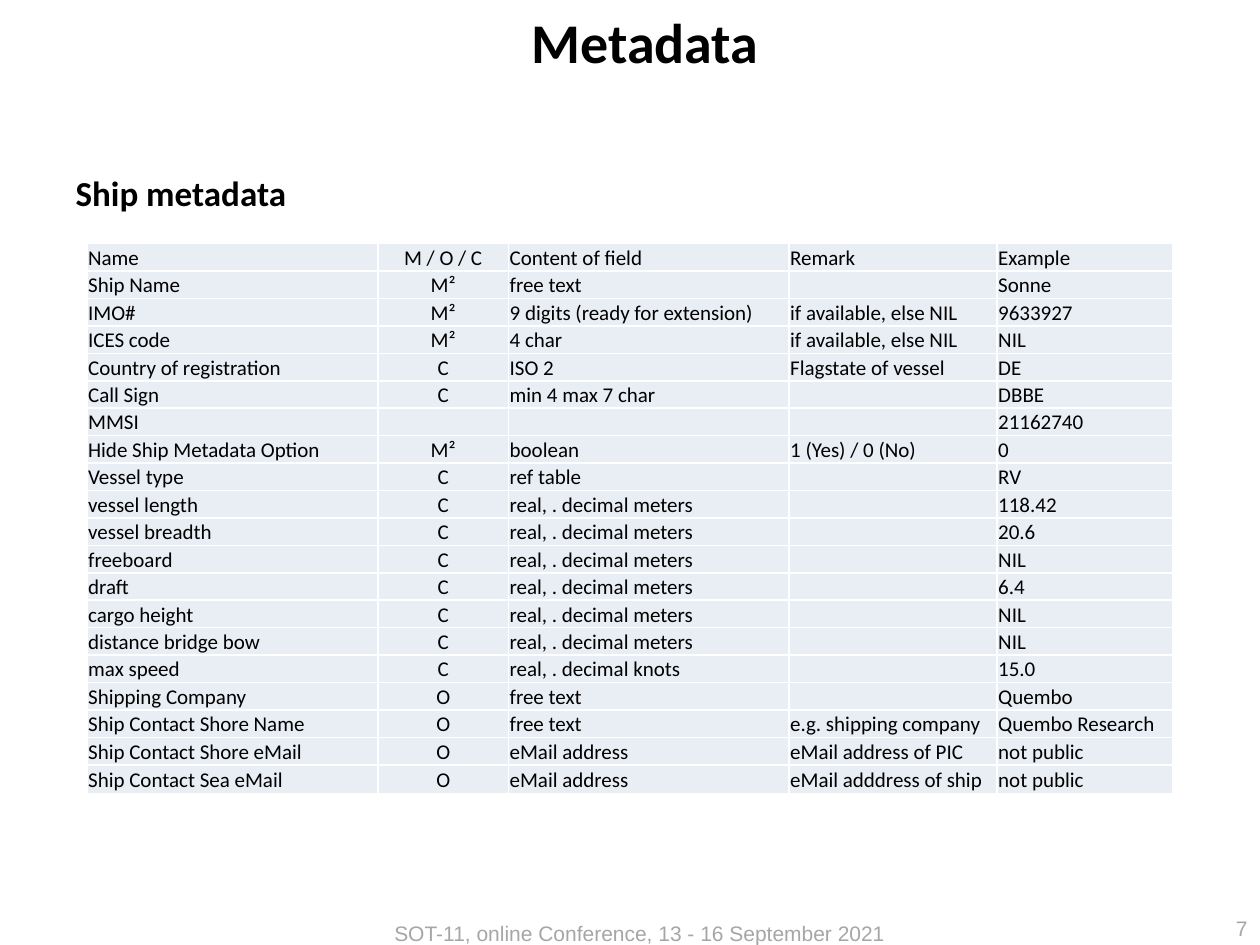
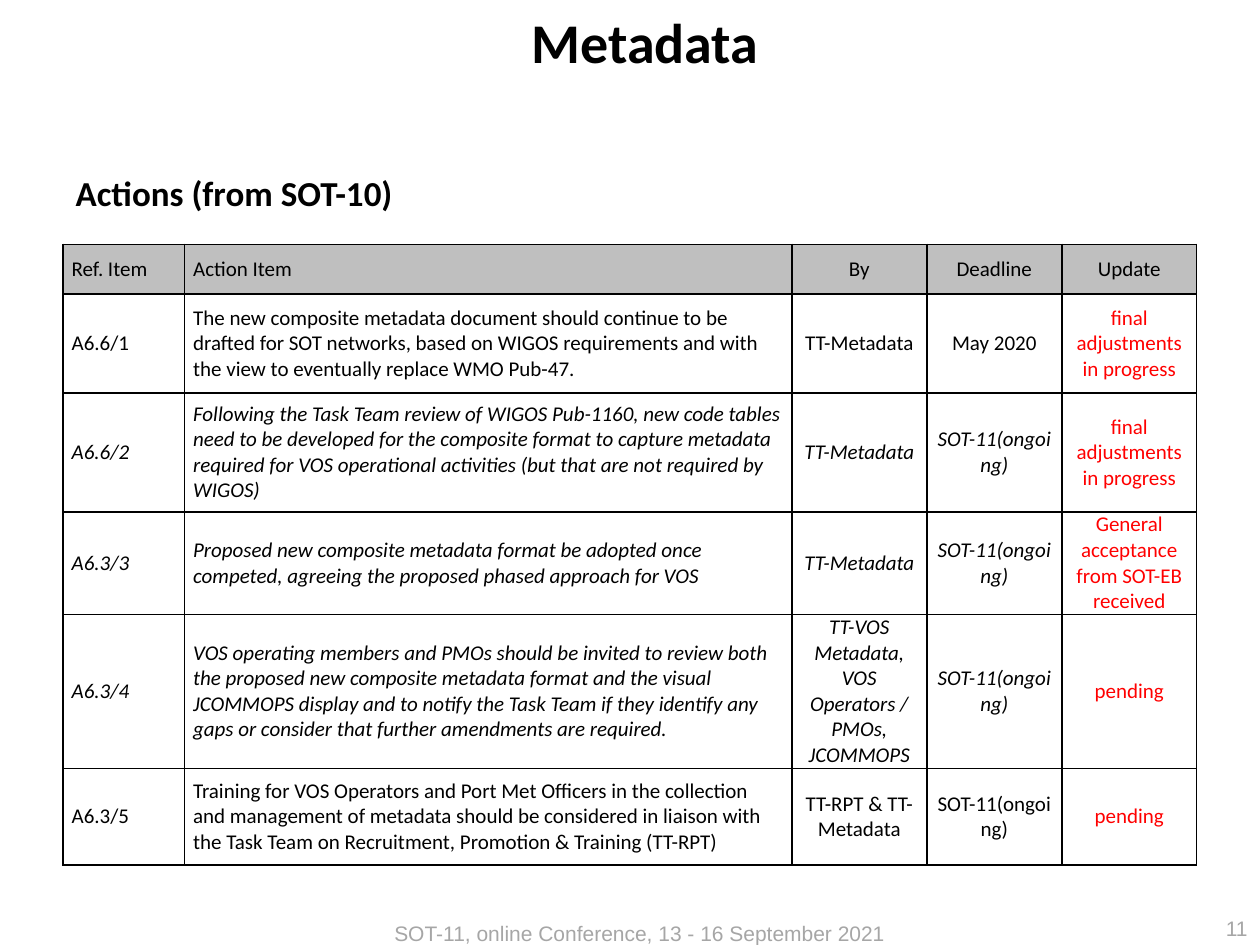
from dataclasses import dataclass

from lxml import etree
from pptx import Presentation
from pptx.dml.color import RGBColor
from pptx.enum.text import MSO_ANCHOR, PP_ALIGN
from pptx.oxml.ns import qn
from pptx.util import Pt

TOP, MIDDLE, BOTTOM = MSO_ANCHOR.TOP, MSO_ANCHOR.MIDDLE, MSO_ANCHOR.BOTTOM
LEFT, CENTER, RIGHT = PP_ALIGN.LEFT, PP_ALIGN.CENTER, PP_ALIGN.RIGHT

BLACK, WHITE, RED = "000000", "FFFFFF", "FF0000"
FOOTER_GRAY, HEADER_GRAY, PALE_BLUE = "A6A6A6", "BFBFBF", "E9EDF4"
TITLE_FONT, FOOTER_FONT = "Calibri", "Arial"
FOOTER_TEXT = "SOT-11, online Conference, 13 - 16 September 2021"


@dataclass(frozen=True)
class Box:
    left: float
    top: float
    width: float
    height: float


TITLE_BOX = Box(87.8, 0.7, 561.6, 70.6)
BODY_BOX = Box(36, 94.3, 648, 388.1)
FOOTER_BOX = Box(218.2, 522.7, 351.4, 21.6)
NUMBER_BOX = Box(558, 521.3, 162, 18)


@dataclass(frozen=True)
class TableSpec:
    left: float
    top: float
    columns: list[float]
    row_heights: list[float]
    rows: list[tuple[str, ...]]
    border: str
    anchor: MSO_ANCHOR
    insets: tuple[float, float, float, float]
    centered: set[int]
    header_fill: str | None = None
    body_fill: str | None = None
    italic_rows: frozenset[int] = frozenset()
    red_column: int | None = None


@dataclass(frozen=True)
class MetadataSlide:
    number: int
    heading: str
    table: TableSpec


METER = "real, . decimal meters"
AVAILABLE = "if available, else NIL"
SHIP_ROWS = [
    ("Name", "M / O / C", "Content of field", "Remark", "Example"),
    ("Ship Name", "M²", "free text", "", "Sonne"),
    ("IMO#", "M²", "9 digits (ready for extension)", AVAILABLE, "9633927"),
    ("ICES code", "M²", "4 char", AVAILABLE, "NIL"),
    ("Country of registration", "C", "ISO 2", "Flagstate of vessel", "DE"),
    ("Call Sign", "C", "min 4 max 7 char", "", "DBBE"),
    ("MMSI", "", "", "", "21162740"),
    ("Hide Ship Metadata Option", "M²", "boolean", "1 (Yes) / 0 (No)", "0"),
    ("Vessel type", "C", "ref table", "", "RV"),
    ("vessel length", "C", METER, "", "118.42"),
    ("vessel breadth", "C", METER, "", "20.6"),
    ("freeboard", "C", METER, "", "NIL"),
    ("draft", "C", METER, "", "6.4"),
    ("cargo height", "C", METER, "", "NIL"),
    ("distance bridge bow", "C", METER, "", "NIL"),
    ("max speed", "C", "real, . decimal knots", "", "15.0"),
    ("Shipping Company", "O", "free text", "", "Quembo"),
    ("Ship Contact Shore Name", "O", "free text", "e.g. shipping company",
     "Quembo Research"),
    ("Ship Contact Shore eMail", "O", "eMail address", "eMail address of PIC",
     "not public"),
    ("Ship Contact Sea eMail", "O", "eMail address", "eMail adddress of ship",
     "not public"),
]

ONGOING = "SOT-11(ongoing)"
ADJUSTING = "final adjustments in progress"
ACTION_ROWS = [
    ("Ref. Item", "Action Item", "By", "Deadline", "Update"),
    ("A6.6/1",
     "The new composite metadata document should continue to be drafted for "
     "SOT networks, based on WIGOS requirements and with the view to "
     "eventually replace WMO Pub-47.",
     "TT-Metadata", "May 2020", ADJUSTING),
    ("A6.6/2",
     "Following the Task Team review of WIGOS Pub-1160, new code tables need "
     "to be developed for the composite format to capture metadata required "
     "for VOS operational activities (but that are not required by WIGOS)",
     "TT-Metadata", ONGOING, ADJUSTING),
    ("A6.3/3",
     "Proposed new composite metadata format be adopted once competed, "
     "agreeing the proposed phased approach for VOS",
     "TT-Metadata", ONGOING, "General acceptance from SOT-EB received"),
    ("A6.3/4",
     "VOS operating members and PMOs should be invited to review both the "
     "proposed new composite metadata format and the visual JCOMMOPS display "
     "and to notify the Task Team if they identify any gaps or consider that "
     "further amendments are required.",
     "TT-VOS Metadata, VOS Operators / PMOs, JCOMMOPS", ONGOING, "pending"),
    ("A6.3/5",
     "Training for VOS Operators and Port Met Officers in the collection and "
     "management of metadata should be considered in liaison with the Task "
     "Team on Recruitment, Promotion & Training (TT-RPT)",
     "TT-RPT & TT-Metadata", ONGOING, "pending"),
]

SLIDES = [
    MetadataSlide(7, "Ship metadata", TableSpec(
        left=49.7, top=139.2,
        columns=[166.3, 74.6, 160.3, 118.9, 100.5],
        row_heights=[15.7] * 19 + [16.3],
        rows=SHIP_ROWS, border=WHITE, anchor=BOTTOM,
        insets=(0.7, 0.7, 0.7, 0), centered={1},
        header_fill=PALE_BLUE, body_fill=PALE_BLUE)),
    MetadataSlide(11, "Actions (from SOT-10)", TableSpec(
        left=36, top=139.7,
        columns=[69.4, 347.1] + [77.15] * 3,
        row_heights=[28.3, 56.6, 68, 58.6, 87.9, 55.4],
        rows=ACTION_ROWS, border=BLACK, anchor=MIDDLE,
        insets=(5, 0, 5, 0), centered={2, 3, 4},
        header_fill=HEADER_GRAY, italic_rows=frozenset({2, 3, 4}),
        red_column=4)),
]


def rgb(color: str) -> RGBColor:
    return RGBColor.from_string(color)


def format_paragraph(paragraph, size: float, color: str = BLACK,
                     font_name: str = TITLE_FONT, align: PP_ALIGN = LEFT,
                     bold: bool = False, italic: bool = False) -> None:
    paragraph.alignment = align
    font = paragraph.font
    font.name, font.size = font_name, Pt(size)
    font.bold, font.italic = bold, italic
    font.color.rgb = rgb(color)


def place(shape, box: Box) -> None:
    shape.left, shape.top = Pt(box.left), Pt(box.top)
    shape.width, shape.height = Pt(box.width), Pt(box.height)


def fill_placeholder(shape, box: Box, text: str, size: float,
                     align: PP_ALIGN) -> None:
    place(shape, box)
    frame = shape.text_frame
    frame.text = text
    frame.vertical_anchor = TOP
    paragraph = frame.paragraphs[0]
    properties = paragraph._p.get_or_add_pPr()
    properties.set("marL", "0")
    properties.set("indent", "0")
    paragraph.space_before = Pt(0)
    etree.SubElement(properties, qn("a:buNone"))
    format_paragraph(paragraph, size, align=align, bold=True)


def add_footer_text(slide, box: Box, text: str, align: PP_ALIGN,
                    anchor: MSO_ANCHOR) -> None:
    shape = slide.shapes.add_textbox(0, 0, 0, 0)
    place(shape, box)
    frame = shape.text_frame
    frame.word_wrap = True
    frame.vertical_anchor = anchor
    frame.text = text
    format_paragraph(frame.paragraphs[0], 12, FOOTER_GRAY, FOOTER_FONT, align)


def add_borders(cell, color: str) -> None:
    """Draw 1 pt lines on all four sides; must precede the cell's fill."""
    properties = cell._tc.get_or_add_tcPr()
    for side in ("a:lnL", "a:lnR", "a:lnT", "a:lnB"):
        line = etree.SubElement(properties, qn(side), w=str(Pt(1)))
        solid = etree.SubElement(line, qn("a:solidFill"))
        etree.SubElement(solid, qn("a:srgbClr"), val=color)


def format_cell(cell, spec: TableSpec, row: int, column: int) -> None:
    add_borders(cell, spec.border)
    fill_color = spec.body_fill if row else spec.header_fill
    if fill_color:
        cell.fill.solid()
        cell.fill.fore_color.rgb = rgb(fill_color)
    else:
        cell.fill.background()
    (cell.margin_left, cell.margin_top,
     cell.margin_right, cell.margin_bottom) = map(Pt, spec.insets)
    cell.vertical_anchor = spec.anchor

    text = spec.rows[row][column]
    paragraph = cell.text_frame.paragraphs[0]
    if text:
        cell.text = text
    else:  # keeps an empty cell from stretching its row
        etree.SubElement(paragraph._p, qn("a:endParaRPr"), sz="1200")
    is_update = row > 0 and column == spec.red_column
    format_paragraph(
        cell.text_frame.paragraphs[0], 12,
        color=RED if is_update else BLACK,
        align=CENTER if column in spec.centered else LEFT,
        italic=row in spec.italic_rows and not is_update)


def add_table(slide, spec: TableSpec) -> None:
    table = slide.shapes.add_table(
        len(spec.rows), len(spec.columns), Pt(spec.left), Pt(spec.top),
        Pt(sum(spec.columns)), Pt(sum(spec.row_heights))).table
    table.first_row = table.horz_banding = False
    for column, width in zip(table.columns, spec.columns):
        column.width = Pt(width)
    for row, height in zip(table.rows, spec.row_heights):
        row.height = Pt(height)
    for row in range(len(spec.rows)):
        for column in range(len(spec.columns)):
            format_cell(table.cell(row, column), spec, row, column)


def add_metadata_slide(presentation, content: MetadataSlide) -> None:
    slide = presentation.slides.add_slide(presentation.slide_layouts[1])
    fill_placeholder(slide.shapes.title, TITLE_BOX, "Metadata", 32, CENTER)
    fill_placeholder(slide.placeholders[1], BODY_BOX, content.heading, 20, LEFT)
    add_footer_text(slide, FOOTER_BOX, FOOTER_TEXT, LEFT, TOP)
    add_footer_text(slide, NUMBER_BOX, str(content.number), RIGHT, MIDDLE)
    add_table(slide, content.table)


def main() -> None:
    presentation = Presentation()
    presentation.slide_width, presentation.slide_height = Pt(720), Pt(540)
    for content in SLIDES:
        add_metadata_slide(presentation, content)
    presentation.save("out.pptx")


if __name__ == "__main__":
    main()
